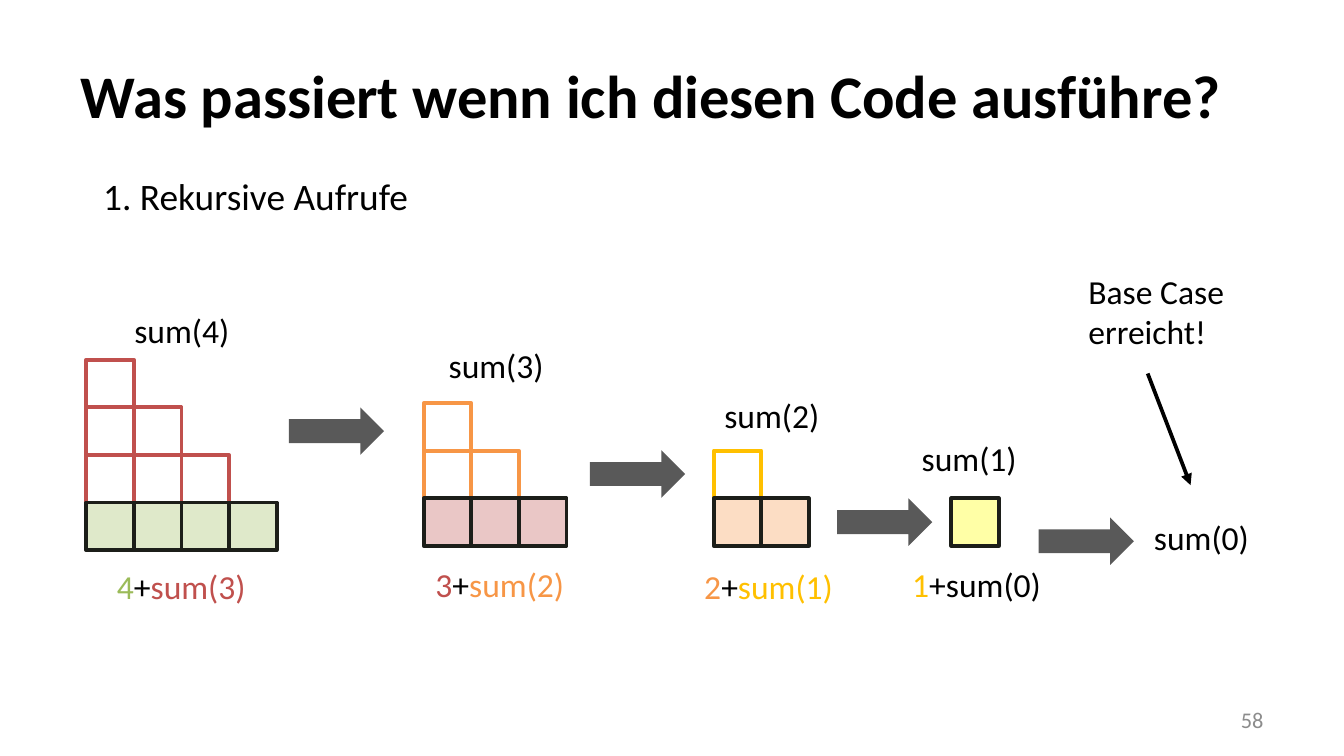
import dataclasses

import pptx
import pptx.dml.color
import pptx.enum.shapes
import pptx.enum.text
import pptx.oxml
import pptx.oxml.ns
import pptx.slide
import pptx.util

Cm = pptx.util.Cm
Pt = pptx.util.Pt
SHAPES = pptx.enum.shapes.MSO_SHAPE
ALIGN = pptx.enum.text.PP_ALIGN
ANCHOR = pptx.enum.text.MSO_ANCHOR

CELL = 0.9  # side of one square, in cm


@dataclasses.dataclass(frozen=True)
class Theme:
    font: str = "Calibri"
    title_size: float = 32.4
    heading_size: float = 20
    label_size: float = 18
    number_size: float = 12
    line_width: float = 2
    text: str = "000000"
    muted: str = "8C8C8C"
    arrow: str = "595959"
    outline: str = "1C1E19"
    # Colour of each call sum(n), and fill and opacity in % of its own row
    calls: tuple = ("000000", "FFC000", "F79646", "C0504D", "9BBB59")
    rows: tuple = (None, ("FFFF00", 35), ("FAC090", 53),
                   ("D99694", 53), ("C3D69B", 53))


def rgb(code):
    return pptx.dml.color.RGBColor.from_string(code)


@dataclasses.dataclass
class SlideBuilder:
    slide: pptx.slide.Slide
    theme: Theme

    def style_run(self, run, size, color, bold=False):
        run.font.name = self.theme.font
        run.font.size = Pt(size)
        run.font.bold = bold
        run.font.color.rgb = rgb(color)

    def title(self, text, left, top, width, height):
        title = self.slide.shapes.title
        title.left, title.top = Cm(left), Cm(top)
        title.width, title.height = Cm(width), Cm(height)
        frame = title.text_frame
        frame.text = text
        frame.auto_size = pptx.enum.text.MSO_AUTO_SIZE.NONE
        frame.vertical_anchor = ANCHOR.MIDDLE
        frame.paragraphs[0].alignment = ALIGN.LEFT
        self.style_run(frame.paragraphs[0].runs[0],
                       self.theme.title_size, self.theme.text, True)

    def text(self, parts, left, top, width, height, size=None,
             align=ALIGN.LEFT, anchor=ANCHOR.TOP):
        """Add a text box; parts is a list of (text, colour) pairs."""
        box = self.slide.shapes.add_textbox(
            Cm(left), Cm(top), Cm(width), Cm(height))
        frame = box.text_frame
        frame.word_wrap = True
        frame.vertical_anchor = anchor
        paragraph = frame.paragraphs[0]
        paragraph.alignment = align
        for words, color in parts:
            run = paragraph.add_run()
            run.text = words
            self.style_run(run, size or self.theme.label_size, color)

    def call_label(self, n, left, top):
        self.text([(f"sum({n})", self.theme.text)], left, top, 2.49, 1.02)

    def expansion(self, n, left, top):
        """Write n+sum(n-1) in the colours of the two calls."""
        calls = self.theme.calls
        self.text([(str(n), calls[n]), ("+", self.theme.text),
                   (f"sum({n - 1})", calls[n - 1])], left, top, 3.18, 1.02)

    def square(self, left, top, line, fill=None):
        square = self.slide.shapes.add_shape(
            SHAPES.RECTANGLE, Cm(left), Cm(top), Cm(CELL), Cm(CELL))
        square.shadow.inherit = False
        square.line.color.rgb = rgb(line)
        square.line.width = Pt(self.theme.line_width)
        if fill is None:
            square.fill.background()
            return
        color, opacity = fill
        square.fill.solid()
        square.fill.fore_color.rgb = rgb(color)
        srgb = square.fill._xPr.find(".//" + pptx.oxml.ns.qn("a:srgbClr"))
        alpha = srgb.makeelement(pptx.oxml.ns.qn("a:alpha"),
                                 {"val": str(opacity * 1000)})
        srgb.append(alpha)

    def staircase(self, n, left, base):
        """Stack rows of 1 to n squares; only the lowest row is filled."""
        for count in range(1, n + 1):
            lowest = count == n
            line = self.theme.outline if lowest else self.theme.calls[n - 1]
            fill = self.theme.rows[n] if lowest else None
            for column in range(count):
                self.square(left + column * CELL,
                            base - (n - count) * CELL, line, fill)

    def block_arrow(self, left, top):
        arrow = self.slide.shapes.add_shape(
            SHAPES.RIGHT_ARROW, Cm(left), Cm(top), Cm(2 * CELL), Cm(CELL))
        arrow.shadow.inherit = False
        arrow.fill.solid()
        arrow.fill.fore_color.rgb = rgb(self.theme.arrow)
        arrow.line.fill.background()

    def pointer(self, start_x, start_y, end_x, end_y):
        pointer = self.slide.shapes.add_connector(
            pptx.enum.shapes.MSO_CONNECTOR.STRAIGHT,
            Cm(start_x), Cm(start_y), Cm(end_x), Cm(end_y))
        pointer.line.color.rgb = rgb(self.theme.text)
        pointer.line.width = Pt(self.theme.line_width)
        namespace = pptx.oxml.ns.nsdecls("a")
        pointer.line._get_or_add_ln().append(pptx.oxml.parse_xml(
            f'<a:tailEnd {namespace} type="triangle"/>'))
        pointer._element.spPr.append(
            pptx.oxml.parse_xml(f"<a:effectLst {namespace}/>"))


def main():
    deck = pptx.Presentation()
    deck.slide_width, deck.slide_height = Cm(25.4), Cm(14.29)
    theme = Theme()
    builder = SlideBuilder(deck.slides.add_slide(deck.slide_layouts[5]), theme)

    builder.title("Was passiert wenn ich diesen Code ausführe?",
                  1.27, 0.58, 22.86, 2.39)
    builder.text([("1. Rekursive Aufrufe", theme.text)],
                 1.7, 3.15, 16.2, 1.12, theme.heading_size)

    # n, staircase (left, base), call label, expansion, arrow to the next call
    calls = [
        (4, (1.63, 9.5), (2.29, 5.74), (1.96, 10.57), (5.46, 7.7)),
        (3, (8.01, 9.42), (8.23, 6.4), (7.98, 10.54), (11.15, 8.51)),
        (2, (13.49, 9.42), (13.44, 7.34), (13.06, 10.57), (15.82, 9.42)),
        (1, (17.98, 9.42), (17.17, 8.15), (16.99, 10.54), (19.63, 9.78)),
    ]
    for n, stairs, label, expansion, arrow in calls:
        builder.staircase(n, *stairs)
        builder.call_label(n, *label)
        builder.expansion(n, *expansion)
        builder.block_arrow(*arrow)

    builder.call_label(0, 21.56, 9.65)
    builder.text([("Base Case erreicht!", theme.text)], 20.32, 5, 3.45, 1.8)
    builder.pointer(21.69, 7.06, 22.5, 9.17)

    builder.text([("58", theme.muted)], 18.21, 13.23, 5.92, 0.76,
                 theme.number_size, ALIGN.RIGHT, ANCHOR.MIDDLE)
    deck.save("out.pptx")


if __name__ == "__main__":
    main()
